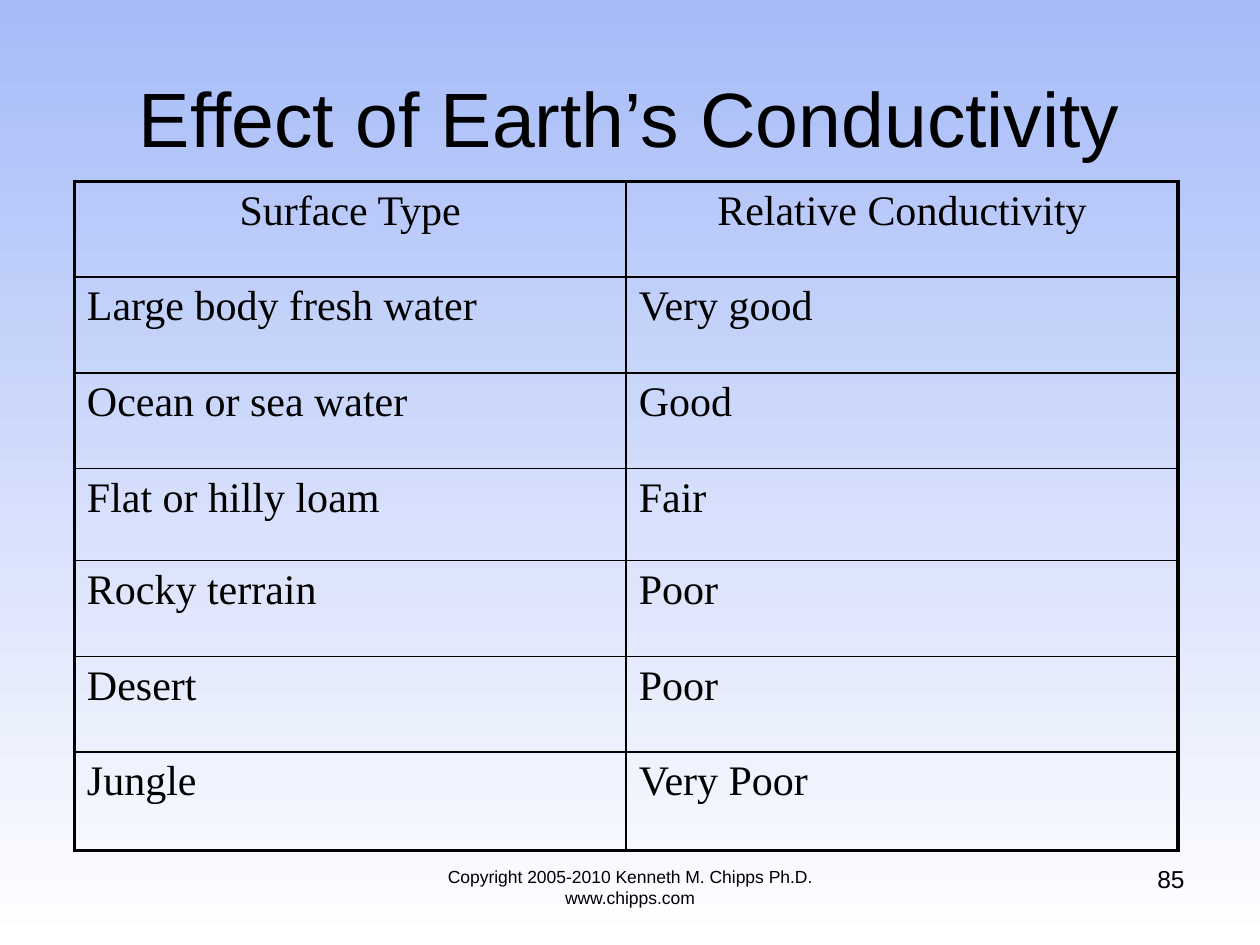
from typing import NamedTuple
from lxml.etree import SubElement
from pptx import Presentation
from pptx.dml.color import RGBColor
from pptx.enum.text import MSO_ANCHOR, PP_ALIGN
from pptx.oxml.ns import qn
from pptx.util import Inches, Pt

WIDE, HIGH = Inches(10), Inches(7.5)
INK = "000000"
THIN, THICK = Pt(1), Pt(2.25)


class Box(NamedTuple):
    left: float
    top: float
    width: float
    height: float

    def place(self) -> tuple:
        return (int(self.left * WIDE), int(self.top * HIGH),
                int(self.width * WIDE), int(self.height * HIGH))


class Note(NamedTuple):
    text: str
    box: Box
    size: int
    align: PP_ALIGN


class Row(NamedTuple):
    kind: str
    grade: str
    height: float = 0.76


ROWS = [
    Row("Surface Type", "Relative Conductivity"),
    Row("Large body fresh water", "Very good"),
    Row("Ocean or sea water", "Good"),
    Row("Flat or hilly loam", "Fair", 0.73),
    Row("Rocky terrain", "Poor"),
    Row("Desert", "Poor"),
    Row("Jungle", "Very Poor", 0.78),
]
NOTES = [
    Note("Copyright 2005-2010 Kenneth M. Chipps Ph.D. www.chipps.com",
         Box(0.3, 0.91, 0.4, 0.07), 10, PP_ALIGN.CENTER),
    Note("85", Box(0.717, 0.908, 0.233, 0.07), 14, PP_ALIGN.RIGHT),
]
TITLE = Box(0.05, 0.04, 0.9, 0.167)
GRID = Box(0.059, 0.192, 0.876, 0.708)


def color(code: str) -> RGBColor:
    return RGBColor.from_string(code)


def write(frame, text: str, font: str, size: int, align: PP_ALIGN) -> None:
    frame.text = text
    for para in frame.paragraphs:
        para.alignment = align
        for run in para.runs:
            run.font.name = font
            run.font.size = Pt(size)
            run.font.color.rgb = color(INK)


def edge(cell, side: str, width: int) -> None:
    line = SubElement(cell._tc.get_or_add_tcPr(), qn(f"a:{side}"), w=str(width))
    fill = SubElement(line, qn("a:solidFill"))
    SubElement(fill, qn("a:srgbClr"), val=INK)


def draw_note(slide, note: Note) -> None:
    frame = slide.shapes.add_textbox(*note.box.place()).text_frame
    frame.word_wrap = True
    write(frame, note.text, "Arial", note.size, note.align)


def draw_grid(slide, rows: list[Row], box: Box) -> None:
    table = slide.shapes.add_table(len(rows), 2, *box.place()).table
    table.first_row = table.horz_banding = False
    last = len(rows) - 1
    for i, row in enumerate(rows):
        table.rows[i].height = Inches(row.height)
        align = PP_ALIGN.LEFT if i else PP_ALIGN.CENTER
        for j, text in enumerate((row.kind, row.grade)):
            cell = table.cell(i, j)
            write(cell.text_frame, text, "Times New Roman", 24, align)
            outer = {"lnL": j == 0, "lnR": j == 1, "lnT": i == 0, "lnB": i == last}
            for side, rim in outer.items():
                edge(cell, side, THICK if rim else THIN)
            cell.fill.background()


def main() -> None:
    deck = Presentation()
    deck.slide_width, deck.slide_height = WIDE, HIGH
    slide = deck.slides.add_slide(deck.slide_layouts[5])

    fill = slide.background.fill
    fill.gradient()
    fill.gradient_angle = 270
    for stop, code, spot in zip(fill.gradient_stops, ("A6BBF8", "FFFFFF"), (0, 1)):
        stop.color.rgb = color(code)
        stop.position = spot

    title = slide.shapes.title
    title.left, title.top, title.width, title.height = TITLE.place()
    title.text_frame.vertical_anchor = MSO_ANCHOR.MIDDLE
    write(title.text_frame, "Effect of Earth’s Conductivity", "Arial", 44, PP_ALIGN.CENTER)

    draw_grid(slide, ROWS, GRID)
    for note in NOTES:
        draw_note(slide, note)
    deck.save("out.pptx")


if __name__ == "__main__":
    main()
